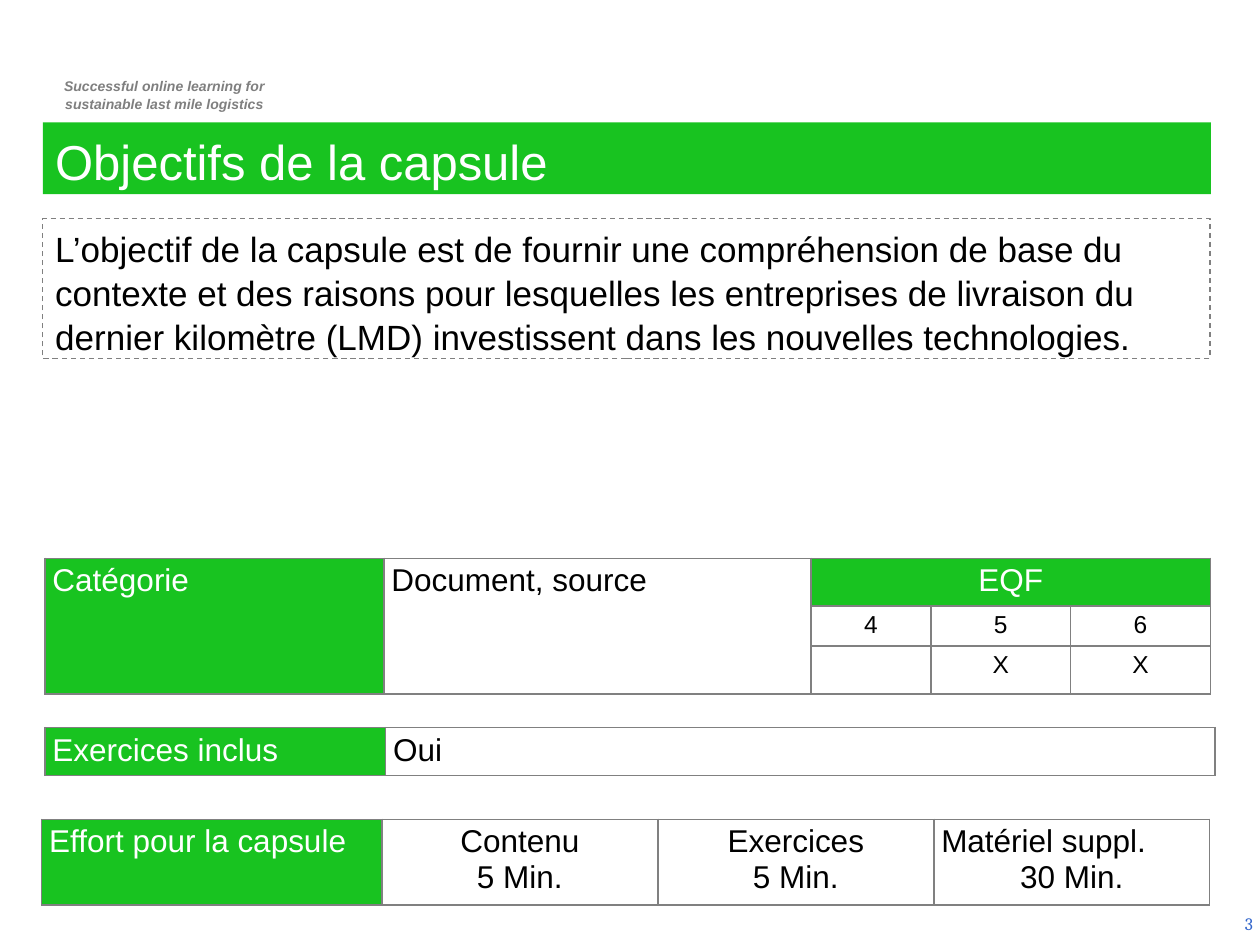
from lxml.etree import SubElement
from pptx import Presentation
from pptx.dml.color import RGBColor
from pptx.enum.dml import MSO_LINE
from pptx.enum.shapes import MSO_SHAPE
from pptx.enum.text import MSO_ANCHOR, PP_ALIGN
from pptx.oxml.ns import qn
from pptx.util import Pt

HUES = {"green": "18C320", "white": "FFFFFF", "black": "000000",
        "gray": "808080", "tag": "7F7F7F", "blue": "3366CC"}
LEFT, MID, RIGHT, FULL = PP_ALIGN.LEFT, PP_ALIGN.CENTER, PP_ALIGN.RIGHT, PP_ALIGN.JUSTIFY


def hue(name):
    """Return the named colour."""
    return RGBColor.from_string(HUES[name])


def write(frame, text, size, color, align=LEFT, face="Arial", bold=False, space=None):
    """Set the text of a frame and format its runs."""
    frame.text = text
    frame.word_wrap = True
    for para in frame.paragraphs:
        para.alignment = align
        if space:
            para.line_spacing = space
        for run in para.runs:
            font = run.font
            font.name, font.size = face, Pt(size)
            font.bold = font.italic = bold
            font.color.rgb = hue(color)


def label(slide, box, text, size, color, **style):
    """Place a plain text box."""
    frame = slide.shapes.add_textbox(*map(Pt, box)).text_frame
    write(frame, text, size, color, **style)
    return frame


def panel(slide, box, text, size, color, fill=None, line=None):
    """Place a rectangle with text, filled or with a dashed outline."""
    shape = slide.shapes.add_shape(MSO_SHAPE.RECTANGLE, *map(Pt, box))
    shape.shadow.inherit = False
    if fill:
        shape.fill.solid()
        shape.fill.fore_color.rgb = hue(fill)
    else:
        shape.fill.background()
    if line:
        shape.line.color.rgb = hue(line)
        shape.line.width = Pt(0.75)
        shape.line.dash_style = MSO_LINE.DASH
    else:
        shape.line.fill.background()
    shape.text_frame.vertical_anchor = MSO_ANCHOR.TOP
    write(shape.text_frame, text, size, color, space=1.05)


def edge(cell):
    """Draw the four borders of a cell."""
    props = cell._tc.get_or_add_tcPr()
    for side in ("a:lnL", "a:lnR", "a:lnT", "a:lnB"):
        line = SubElement(props, qn(side), w=str(Pt(1)))
        fill = SubElement(line, qn("a:solidFill"))
        SubElement(fill, qn("a:srgbClr"), val=HUES["gray"])


def grid(slide, left, top, cols, rows):
    """Place an empty table with borders and no cell fill."""
    shape = slide.shapes.add_table(len(rows), len(cols), Pt(left), Pt(top),
                                   Pt(sum(cols)), Pt(sum(rows)))
    table = shape.table
    for col, width in zip(table.columns, cols):
        col.width = Pt(width)
    for row, height in zip(table.rows, rows):
        row.height = Pt(height)
    for cell in table.iter_cells():
        edge(cell)
        cell.fill.background()
        cell.margin_left = cell.margin_right = Pt(4.3)
        cell.margin_top = cell.margin_bottom = Pt(2.9)
    return table


def entry(cell, text, align=FULL, size=18, head=False):
    """Fill one cell, in green when it is a heading."""
    write(cell.text_frame, text, size, "white" if head else "black", align)
    if head:
        cell.fill.solid()
        cell.fill.fore_color.rgb = hue("green")


def level(slide, left, top):
    """Place the table of category and EQF levels."""
    table = grid(slide, left, top, (193.7, 244.1, 68.4, 79.9, 79.9), (26.8, 22.4, 26.6))
    cell = table.cell
    for col in (0, 1):
        cell(0, col).merge(cell(2, col))
    cell(0, 2).merge(cell(0, 4))
    entry(cell(0, 0), "Catégorie", head=True)
    entry(cell(0, 1), "Document, source")
    entry(cell(0, 2), "EQF", MID, head=True)
    for row, marks in enumerate((("4", "5", "6"), ("", "X", "X")), 1):
        for col, mark in enumerate(marks, 2):
            if mark:
                entry(cell(row, col), mark, MID, 14)


def drill(slide, left, top):
    """Place the table of included exercises."""
    table = grid(slide, left, top, (194.7, 473.9), (27,))
    entry(table.cell(0, 0), "Exercices inclus", head=True)
    entry(table.cell(0, 1), "Oui")


def effort(slide, left, top):
    """Place the table of time needed."""
    table = grid(slide, left, top, (194.4,) + (157.7,) * 3, (48.4,))
    entry(table.cell(0, 0), "Effort pour la capsule", head=True)
    parts = (("Contenu", 5), ("Exercices", 5), ("Matériel suppl.", 30))
    for col, (name, time) in enumerate(parts, 1):
        entry(table.cell(0, col), f"{name}\n{time} Min.", MID)
    table.cell(0, 3).text_frame.paragraphs[0].alignment = LEFT


def main():
    """Build the slide and save it."""
    deck = Presentation()
    deck.slide_width, deck.slide_height = Pt(720), Pt(540)
    slide = deck.slides.add_slide(deck.slide_layouts[6])
    label(slide, (21, 40.3, 146, 27),
          "Successful online learning for\nsustainable last mile logistics",
          8, "tag", align=MID, bold=True, space=1.05)
    frame = label(slide, (555, 513.4, 168, 28.8), "3", 10, "blue", align=RIGHT, face="Cambria")
    frame.vertical_anchor = MSO_ANCHOR.MIDDLE
    panel(slide, (24.5, 70, 667.5, 41), "Objectifs de la capsule", 28, "white", fill="green")
    panel(slide, (24.5, 125, 667, 80),
          "L’objectif de la capsule est de fournir une compréhension de base du contexte "
          "et des raisons pour lesquelles les entreprises de livraison du dernier kilomètre "
          "(LMD) investissent dans les nouvelles technologies.", 20, "black", line="gray")
    level(slide, 25.7, 319)
    drill(slide, 25.7, 415.8)
    effort(slide, 23.8, 468.2)
    deck.save("out.pptx")


if __name__ == "__main__":
    main()
